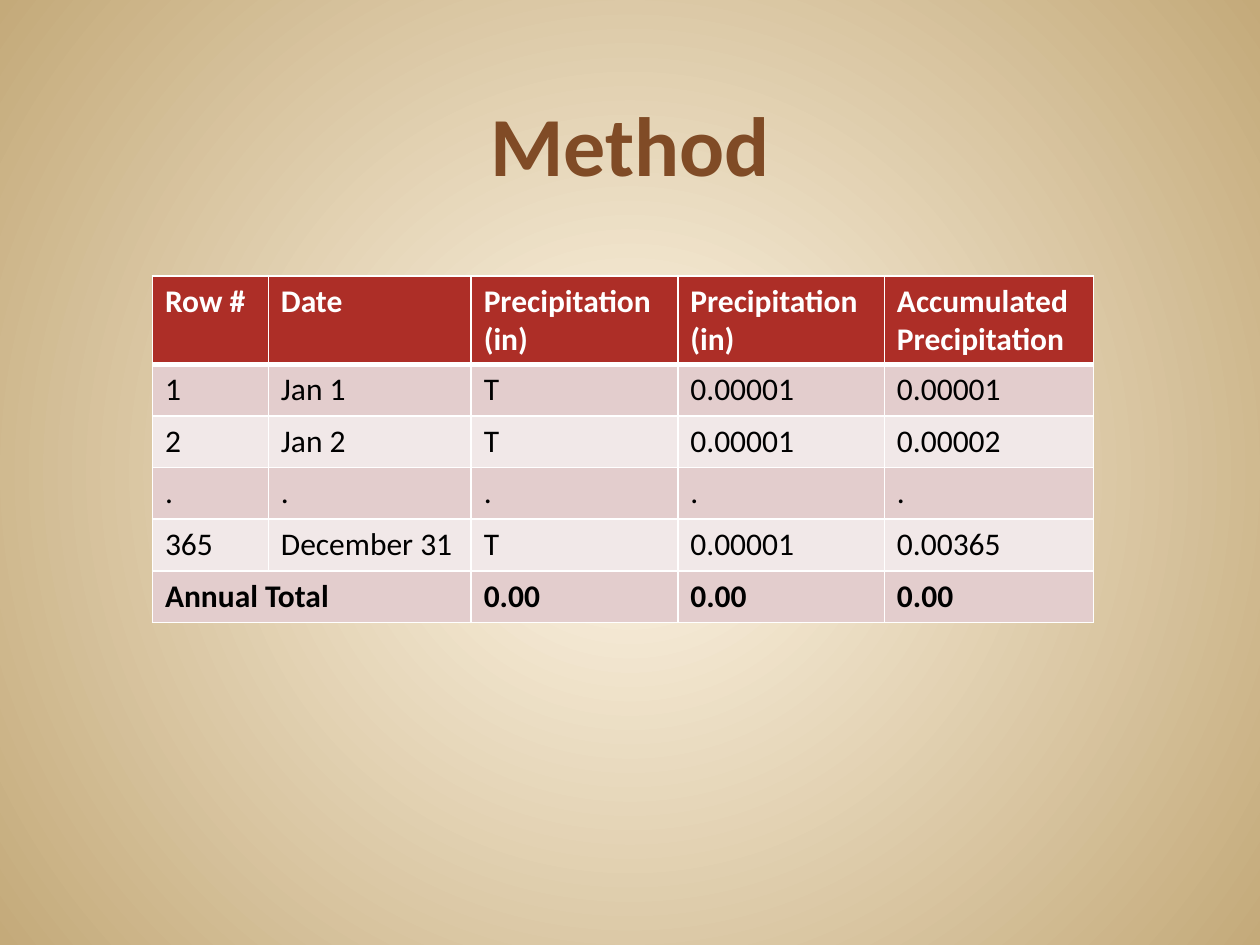
import pptx
import pptx.util
import pptx.dml.color
import pptx.enum.text
import pptx.oxml
import pptx.oxml.ns
from lxml import etree

Inches, Pt = pptx.util.Inches, pptx.util.Pt
RGBColor = pptx.dml.color.RGBColor
qn = pptx.oxml.ns.qn

# Content
TITLE = "Method"
ROWS = [
    ["Row #", "Date", "Precipitation\n(in)", "Precipitation\n(in)", "Accumulated\nPrecipitation"],
    ["1", "Jan 1", "T", "0.00001", "0.00001"],
    ["2", "Jan 2", "T", "0.00001", "0.00002"],
    [".", ".", ".", ".", "."],
    ["365", "December 31", "T", "0.00001", "0.00365"],
    ["Annual Total", "", "0.00", "0.00", "0.00"],
]

# Look
FONT = "Calibri"
BROWN = RGBColor(0x80, 0x4B, 0x26)
RED = RGBColor(0xAD, 0x2E, 0x27)
BANDS = [RGBColor(0xE3, 0xCD, 0xCD), RGBColor(0xF1, 0xE8, 0xE8)]
WHITE = RGBColor(0xFF, 0xFF, 0xFF)
BLACK = RGBColor(0, 0, 0)
GLOW = [RGBColor(0xFF, 0xF7, 0xE8), RGBColor(0xC4, 0xAA, 0x7A)]

# Grid
COLUMN_WIDTHS = [0.92, 1.61, 1.64, 1.64, 1.66]
HEADER_HEIGHT, ROW_HEIGHT = 0.7, 0.41
TABLE_LEFT, TABLE_TOP = 1.21, 2.19


def add_span(para, text, size, color, bold):
    span = para.add_run()
    span.text = text
    span.font.name = FONT
    span.font.size = Pt(size)
    span.font.bold = bold
    span.font.color.rgb = color


def set_borders(cell, bottom_width, top_width):
    props = cell._tc.get_or_add_tcPr()
    widths = {"lnL": 1, "lnR": 1, "lnT": top_width, "lnB": bottom_width}
    for index, (side, width) in enumerate(widths.items()):
        line = etree.Element(qn("a:" + side), w=str(Pt(width)))
        fill = etree.SubElement(line, qn("a:solidFill"))
        etree.SubElement(fill, qn("a:srgbClr"), val=str(WHITE))
        props.insert(index, line)


deck = pptx.Presentation()
deck.slide_width, deck.slide_height = Inches(10), Inches(7.5)
page = deck.slides.add_slide(deck.slide_layouts[6])

# Circular background gradient
backdrop = page.background.fill
backdrop.gradient()
for stop, color, position in zip(backdrop.gradient_stops, GLOW, (0, 1)):
    stop.color.rgb = color
    stop.position = position
linear = page.background._cSld.find(".//" + qn("a:lin"))
circle = etree.Element(qn("a:path"))
circle.set("path", "circle")
etree.SubElement(circle, qn("a:fillToRect"), l="50000", t="50000", r="50000", b="50000")
linear.getparent().replace(linear, circle)

# Title
box = page.shapes.add_textbox(Inches(0.5), Inches(0.33), Inches(9), Inches(1.25))
box.text_frame.word_wrap = True
box.text_frame.vertical_anchor = pptx.enum.text.MSO_ANCHOR.BOTTOM
para = box.text_frame.paragraphs[0]
para.alignment = pptx.enum.text.PP_ALIGN.CENTER
add_span(para, TITLE, 48, BROWN, True)

# Table
last = len(ROWS) - 1
heights = [HEADER_HEIGHT] + [ROW_HEIGHT] * last
table = page.shapes.add_table(
    len(ROWS), len(COLUMN_WIDTHS), Inches(TABLE_LEFT), Inches(TABLE_TOP),
    Inches(sum(COLUMN_WIDTHS)), Inches(sum(heights))).table
for column, width in zip(table.columns, COLUMN_WIDTHS):
    column.width = Inches(width)
for row, height in zip(table.rows, heights):
    row.height = Inches(height)
table.cell(last, 0).merge(table.cell(last, 1))

for r, texts in enumerate(ROWS):
    header = r == 0
    for c, text in enumerate(texts):
        cell = table.cell(r, c)
        cell.fill.solid()
        cell.fill.fore_color.rgb = RED if header else BANDS[(r - 1) % 2]
        set_borders(cell, 3 if header else 1, 3 if r == 1 else 1)
        if cell.is_spanned:
            continue
        for i, words in enumerate(text.split("\n")):
            para = cell.text_frame.paragraphs[0] if i == 0 else cell.text_frame.add_paragraph()
            add_span(para, words, 18, WHITE if header else BLACK, header or r == last)

deck.save("out.pptx")
